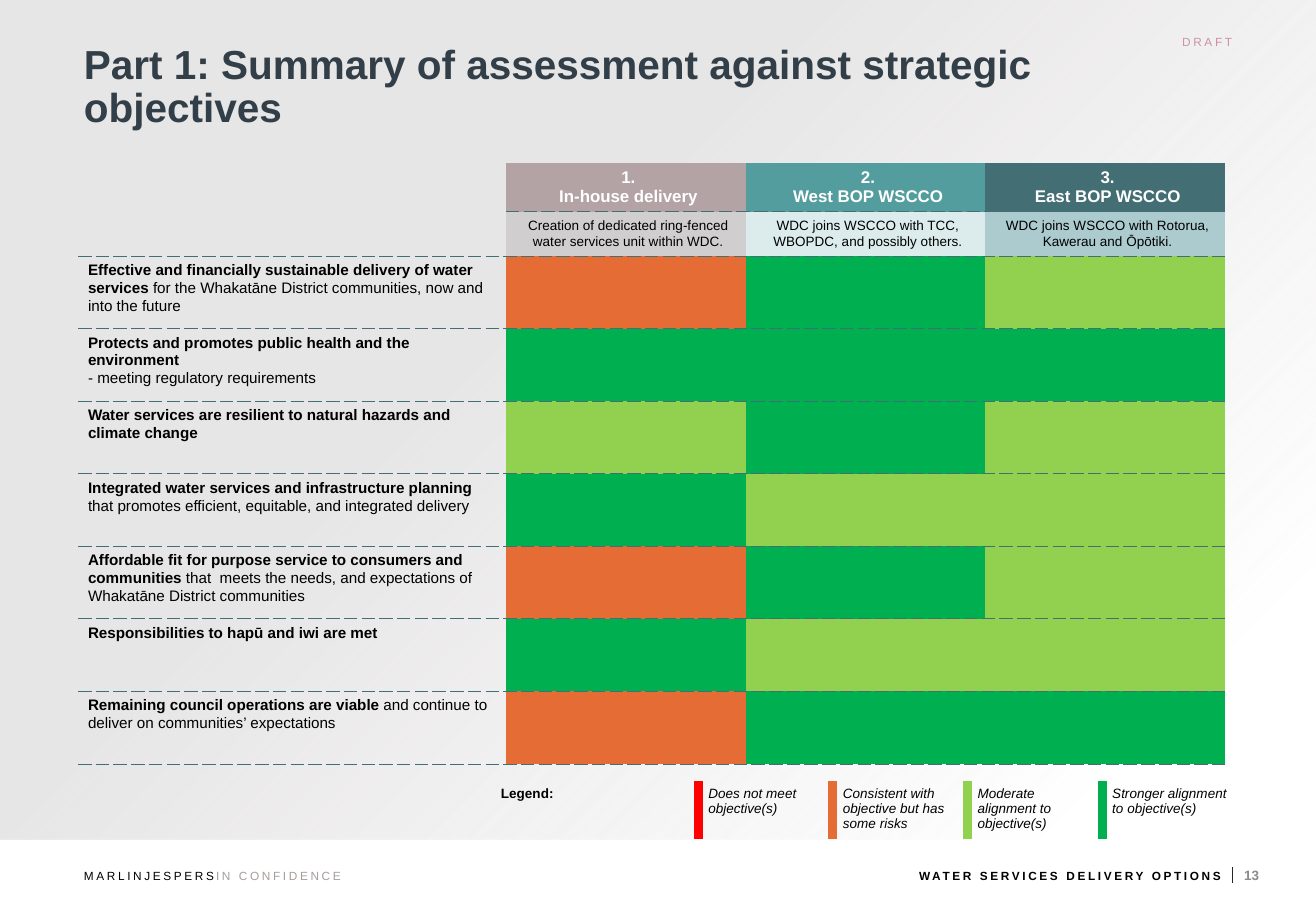
"""Build the slide summarising the assessment against strategic objectives."""
from pptx import Presentation
from pptx.dml.color import RGBColor
from pptx.enum.shapes import MSO_CONNECTOR, MSO_SHAPE
from pptx.enum.text import MSO_ANCHOR as ANCHOR, PP_ALIGN as ALIGN
from pptx.oxml import parse_xml
from pptx.oxml.ns import nsdecls, qn
from pptx.util import Pt
from lxml.etree import SubElement

PX = 7526
BLACK = RGBColor(0x00, 0x00, 0x00)
WHITE = RGBColor(0xFF, 0xFF, 0xFF)
SLATE = RGBColor(0x33, 0x3F, 0x48)
CRIMSON = RGBColor(0xA6, 0x15, 0x4B)
WARM_GREY = RGBColor(0xA4, 0x9E, 0x9B)
MID_GREY = RGBColor(0x8C, 0x8C, 0x8C)
CHARCOAL = RGBColor(0x26, 0x26, 0x26)
MAUVE = RGBColor(0xB3, 0xA3, 0xA4)
PALE_MAUVE = RGBColor(0xD0, 0xCE, 0xCE)
TEAL = RGBColor(0x54, 0x9D, 0x9E)
PALE_TEAL = RGBColor(0xDC, 0xEC, 0xEC)
DEEP_TEAL = RGBColor(0x43, 0x6E, 0x73)
PALE_DEEP_TEAL = RGBColor(0xAC, 0xCB, 0xCF)
FAILS = RGBColor(0xFF, 0x00, 0x00)
RISKS = RGBColor(0xE6, 0x6C, 0x36)
MODERATE = RGBColor(0x92, 0xD0, 0x50)
STRONG = RGBColor(0x00, 0xB0, 0x50)
NO_STYLE = "{2D5ABB26-0587-4C30-8999-92F81FD0307C}"

OPTIONS = [
    ("1.\nIn-house delivery", MAUVE,
     "Creation of dedicated ring-fenced water services unit within WDC.", PALE_MAUVE),
    ("2.\nWest BOP WSCCO", TEAL,
     "WDC joins WSCCO with TCC, WBOPDC, and possibly others.", PALE_TEAL),
    ("3.\nEast BOP WSCCO", DEEP_TEAL,
     "WDC joins WSCCO with Rotorua, Kawerau and Ōpōtiki.", PALE_DEEP_TEAL),
]
OBJECTIVES = [
    ("Effective and financially sustainable delivery of water services ",
     "for the Whakatāne District communities, now and into the future",
     (RISKS, STRONG, MODERATE)),
    ("Protects and promotes public health and the environment",
     "- meeting regulatory requirements", (STRONG, STRONG, STRONG)),
    ("Water services are resilient to natural hazards and climate change", "",
     (MODERATE, STRONG, MODERATE)),
    ("Integrated water services and infrastructure planning ",
     "that promotes efficient, equitable, and integrated delivery",
     (STRONG, MODERATE, MODERATE)),
    ("Affordable fit for purpose service to consumers and communities ",
     "that  meets the needs, and expectations of Whakatāne District communities",
     (RISKS, STRONG, MODERATE)),
    ("Responsibilities to hapū and iwi are met", "", (STRONG, MODERATE, MODERATE)),
    ("Remaining council operations are viable ",
     "and continue to deliver on communities’ expectations", (RISKS, STRONG, STRONG)),
]
LEGEND = [
    ("Does not meet objective(s)", FAILS),
    ("Consistent with objective but has some risks", RISKS),
    ("Moderate alignment to objective(s)", MODERATE),
    ("Stronger alignment to objective(s)", STRONG),
]


def add_label(text, box, size, color, bold=False, align=ALIGN.LEFT, spacing=0, leading=None):
    frame = slide.shapes.add_textbox(*[side * PX for side in box]).text_frame
    frame.word_wrap = True
    frame.margin_left = frame.margin_right = frame.margin_top = frame.margin_bottom = 0
    frame.vertical_anchor = ANCHOR.MIDDLE
    frame.text = text
    line = frame.paragraphs[0]
    line.alignment = align
    line.line_spacing = leading
    font = line.runs[0].font
    font.name, font.size, font.bold, font.color.rgb = "Arial", Pt(size), bold, color
    if spacing:
        line.runs[0]._r.get_or_add_rPr().set("spc", str(spacing))
    return frame


def add_border(cell, side, color, points, dash="solid"):
    edge = SubElement(cell._tc.get_or_add_tcPr(), qn("a:ln" + side), w=str(Pt(points)), cap="flat")
    SubElement(SubElement(edge, qn("a:solidFill")), qn("a:srgbClr"), val=str(color))
    SubElement(edge, qn("a:prstDash"), val=dash)


deck = Presentation()
deck.slide_width, deck.slide_height = 1316 * PX, 911 * PX
slide = deck.slides.add_slide(deck.slide_layouts[6])

for text, box, color, bold, align in [
    ("MARLINJESPERS", (84, 866, 132, 19), BLACK, False, ALIGN.LEFT),
    ("IN CONFIDENCE", (216, 866, 244, 19), WARM_GREY, False, ALIGN.LEFT),
    ("DRAFT", (1103, 28, 129, 28), CRIMSON, False, ALIGN.RIGHT),
    ("WATER SERVICES DELIVERY OPTIONS", (503, 866, 718, 19), BLACK, True, ALIGN.RIGHT),
]:
    add_label(text, box, 7, color, bold, align, 160, Pt(8.5))

divider = slide.shapes.add_connector(
    MSO_CONNECTOR.STRAIGHT, 1232 * PX, 867 * PX, 1232 * PX, 883 * PX)
divider.line.color.rgb, divider.line.width = CHARCOAL, Pt(0.5)
SubElement(divider._element.spPr, qn("a:effectLst"))

backdrop = slide.shapes.add_shape(MSO_SHAPE.RECTANGLE, 0, 0, 1316 * PX, 840 * PX)
backdrop.shadow.inherit = False
backdrop.line.fill.background()
backdrop._element.spPr.find(qn("a:prstGeom")).addnext(parse_xml(
    f'<a:gradFill {nsdecls("a")}><a:gsLst>'
    '<a:gs pos="0"><a:srgbClr val="E7E6E6"/></a:gs>'
    '<a:gs pos="37000"><a:srgbClr val="E7E6E6"/></a:gs>'
    '<a:gs pos="88000"><a:srgbClr val="E7E6E6"><a:alpha val="0"/></a:srgbClr></a:gs>'
    '</a:gsLst><a:path path="circle"><a:fillToRect r="100000" b="100000"/></a:path></a:gradFill>'))

add_label("13", (1244, 866, 32, 19), 8, MID_GREY, True)
title = add_label("Part 1: Summary of assessment against strategic objectives",
                  (84, 44, 1148, 143), 24, SLATE, True, leading=0.9)
title.vertical_anchor = ANCHOR.TOP

assessment_frame = slide.shapes.add_table(9, 4, 78 * PX, 163 * PX, 1147 * PX, 597 * PX)
legend_frame = slide.shapes.add_table(1, 6, 429 * PX, 781 * PX, 808 * PX, 55 * PX)
for frame in (assessment_frame, legend_frame):
    properties = frame.table._tbl.tblPr
    properties.find(qn("a:tableStyleId")).text = NO_STYLE
    frame.table.first_row = frame.table.horz_banding = False

assessment = assessment_frame.table
for index, column in enumerate(assessment.columns):
    column.width = 719 * PX // 3 if index else 428 * PX
for index, row in enumerate(assessment.rows):
    row.height = (47 * PX, 42 * PX)[index] if index < 2 else 508 * PX // 7
    for cell in row.cells:
        cell.margin_left, cell.margin_right = 10 * PX, 5 * PX
        cell.margin_top = cell.margin_bottom = (4 if index < 2 else 5) * PX
        if index > 1:
            add_border(cell, "T", DEEP_TEAL, 0.5, "dash")
        add_border(cell, "B", DEEP_TEAL, 0.5, "dash")
        cell.fill.background()
assessment.cell(0, 0).merge(assessment.cell(1, 0))

for column, (name, name_fill, summary, summary_fill) in enumerate(OPTIONS, 1):
    for row, text, fill, size, color in [
        (0, name, name_fill, 10, WHITE), (1, summary, summary_fill, 8, BLACK),
    ]:
        cell = assessment.cell(row, column)
        cell.fill.solid()
        cell.fill.fore_color.rgb = fill
        cell.vertical_anchor = ANCHOR.MIDDLE
        cell.text_frame.text = text
        for line in cell.text_frame.paragraphs:
            line.alignment = ALIGN.CENTER
            line.line_spacing = 1.05 if row else None
            font = line.runs[0].font
            font.name, font.size, font.bold, font.color.rgb = "Arial", Pt(size), row == 0, color

for row, (goal, detail, ratings) in enumerate(OBJECTIVES, 2):
    line = assessment.cell(row, 0).text_frame.paragraphs[0]
    line.line_spacing = 1.05
    line.text = goal
    if detail.startswith("-"):
        line.add_line_break()
    if detail:
        line.add_run().text = detail
    for position, run in enumerate(line.runs):
        font = run.font
        font.name, font.size, font.bold, font.color.rgb = "Arial", Pt(9), position == 0, BLACK
    for column, rating in enumerate(ratings, 1):
        fill = assessment.cell(row, column).fill
        fill.solid()
        fill.fore_color.rgb = rating

legend = legend_frame.table
for column in legend.columns:
    column.width = 808 * PX // 6
legend.rows[0].height = 55 * PX
swatches = [None, None] + [color for _, color in LEGEND] + [None]
captions = ["Legend:", ""] + [text for text, _ in LEGEND]
for index, caption in enumerate(captions):
    cell = legend.cell(0, index)
    cell.margin_left = cell.margin_right = 10 * PX
    cell.margin_top = cell.margin_bottom = 5 * PX
    for side, color in (("L", swatches[index]), ("R", swatches[index + 1])):
        if color:
            add_border(cell, side, color, 6)
    cell.fill.background()
    if caption:
        line = cell.text_frame.paragraphs[0]
        line.text = caption
        line.alignment = ALIGN.LEFT if index else ALIGN.RIGHT
        font = line.runs[0].font
        font.name, font.size, font.color.rgb = "Arial", Pt(8), BLACK
        font.bold, font.italic = index == 0, index > 0

deck.save("out.pptx")
